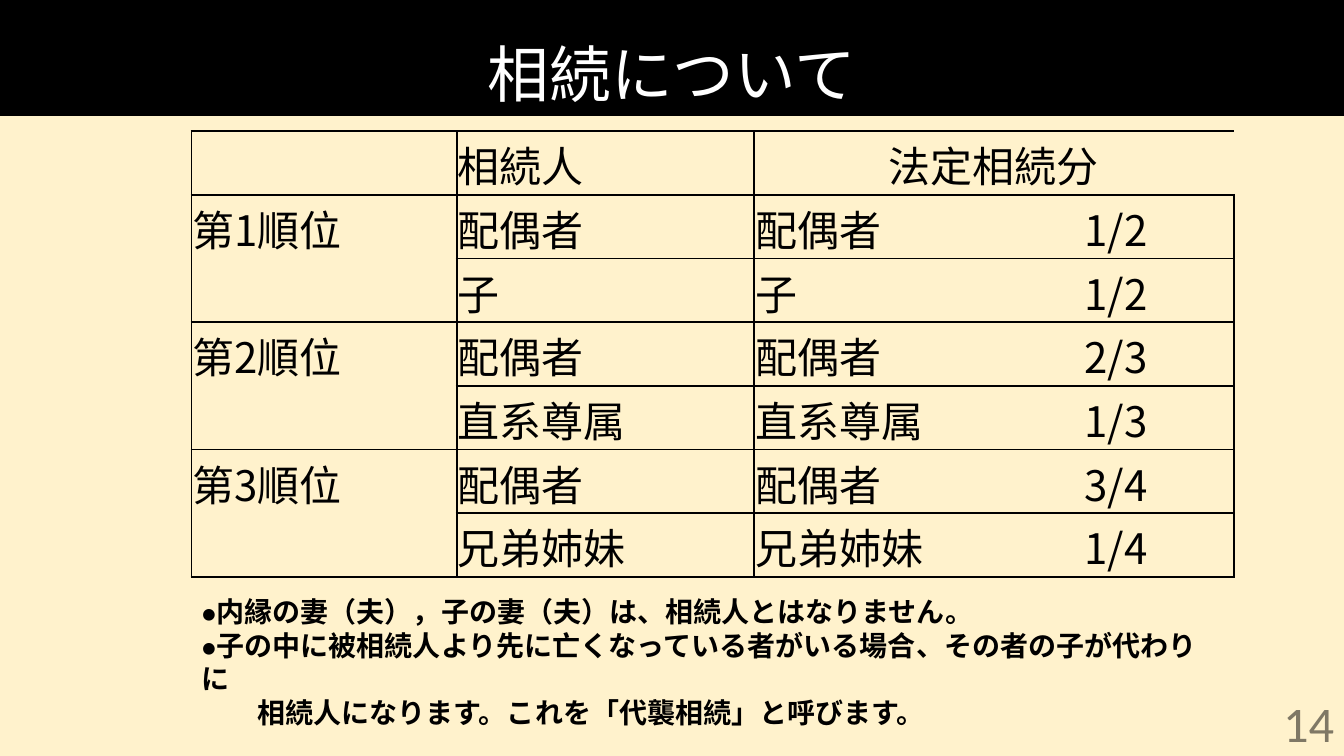
"""Build the slide on the order of heirs and their statutory shares."""
from dataclasses import dataclass
from typing import Any

from lxml.etree import SubElement
from pptx import Presentation
from pptx.dml.color import RGBColor
from pptx.enum.shapes import MSO_SHAPE as Preset
from pptx.enum.text import MSO_ANCHOR as Anchor, PP_ALIGN as Align
from pptx.oxml.ns import qn
from pptx.util import Pt

BLACK, WHITE, CREAM = "000000", "FFFFFF", "FFF2CC"
LATIN, CJK = "Calibri", "Noto Sans CJK JP"
TABLE_LEFT, TABLE_TOP, ROW_HEIGHT = 136.8, 93.6, 45.5
COLUMN_WIDTHS = (189.4, 212.4, 235.4, 107.3)
EDGES = ("L", "R", "T", "B")
CELL_FORMAT = dict(margin_left=Pt(0.75), margin_right=Pt(0.75), margin_top=Pt(0.75),
                   margin_bottom=Pt(0), vertical_anchor=Anchor.BOTTOM)


@dataclass
class Span:
    text: str
    size: float
    bold: bool = False
    color: str = BLACK
    font: str = LATIN


@dataclass
class Heir:
    rank: str
    name: str
    share: str


@dataclass
class Note:
    spans: list[Span]
    indent: float = 0


HEIRS = [
    Heir("第1順位", "配偶者", "1/2"),
    Heir("", "子", "1/2"),
    Heir("第2順位", "配偶者", "2/3"),
    Heir("", "直系尊属", "1/3"),
    Heir("第3順位", "配偶者", "3/4"),
    Heir("", "兄弟姉妹", "1/4"),
]
NOTES = [
    Note([Span("●", 18), Span("内縁の妻（夫），子の妻（夫）は、相続人とはなりません。", 20, True)]),
    Note([Span("●", 18),
          Span("子の中に被相続人より先に亡くなっている者がいる場合、その者の子が代わりに", 20, True)]),
    Note([Span("相続人になります。これを「代襲相続」と呼びます。", 20, True)], indent=40),
]


def rgb(value: str) -> RGBColor:
    """Turn a hex string into a colour."""
    return RGBColor.from_string(value)


def apply(target: Any, values: dict[str, Any]) -> None:
    """Set each named attribute on the target."""
    for name, value in values.items():
        setattr(target, name, value)


def add_span(para: Any, span: Span) -> Any:
    """Append a formatted run to a paragraph and return it."""
    run = para.add_run()
    run.text = span.text
    apply(run.font, dict(name=span.font, size=Pt(span.size), bold=span.bold))
    run.font.color.rgb = rgb(span.color)
    SubElement(run.font._element, qn("a:ea"), typeface=span.font)
    return run


def add_box(page: Any, left: float, top: float, width: float, height: float) -> Any:
    """Add a wrapping text box and return its text frame."""
    box = page.shapes.add_textbox(Pt(left), Pt(top), Pt(width), Pt(height))
    box.text_frame.word_wrap = True
    return box.text_frame


def add_title(page: Any, width: float) -> None:
    """Draw the black title band."""
    band = page.shapes.add_shape(Preset.RECTANGLE, Pt(0), Pt(0), Pt(width), Pt(82.8))
    band.shadow.inherit = False
    band.fill.solid()
    band.fill.fore_color.rgb = rgb(BLACK)
    band.line.fill.background()
    band.text_frame.vertical_anchor = Anchor.BOTTOM
    para = band.text_frame.paragraphs[0]
    apply(para, dict(alignment=Align.CENTER, line_spacing=0.9))
    add_span(para, Span("相続について", 44, color=WHITE))


def set_borders(cell: Any, hidden: str) -> None:
    """Draw black cell edges except the hidden ones."""
    properties = cell._tc.get_or_add_tcPr()
    for edge in EDGES:
        line = SubElement(properties, qn(f"a:ln{edge}"), w=str(Pt(1.5)))
        if edge in hidden:
            SubElement(line, qn("a:noFill"))
        else:
            fill = SubElement(line, qn("a:solidFill"))
            SubElement(fill, qn("a:srgbClr"), val=BLACK)


def hidden_edges(row: int, column: int) -> str:
    """Name the edges that join a cell to its neighbour."""
    if column == 0 and row > 0:
        return "B" if row % 2 else "T"
    return {2: "R", 3: "L"}.get(column, "")


def add_heirs(page: Any) -> None:
    """Add the table of heirs and shares."""
    rows = [("", "相続人", "法定相続分", "")]
    rows += [(heir.rank, heir.name, heir.name, heir.share) for heir in HEIRS]
    frame = page.shapes.add_table(
        len(rows), len(COLUMN_WIDTHS), Pt(TABLE_LEFT), Pt(TABLE_TOP),
        Pt(sum(COLUMN_WIDTHS)), Pt(ROW_HEIGHT * len(rows)))
    table = frame.table
    apply(table, dict(first_row=False, horz_banding=False))
    for column, width in zip(table.columns, COLUMN_WIDTHS):
        column.width = Pt(width)
    for r, texts in enumerate(rows):
        table.rows[r].height = Pt(ROW_HEIGHT)
        for c, text in enumerate(texts):
            cell = table.cell(r, c)
            apply(cell, CELL_FORMAT)
            set_borders(cell, hidden_edges(r, c))
            cell.fill.background()
            if text:
                add_span(cell.text_frame.paragraphs[0], Span(text, 30, font=CJK))
    share_head = table.cell(0, 2)
    share_head.merge(table.cell(0, 3))
    share_head.text_frame.paragraphs[0].alignment = Align.CENTER


def add_notes(page: Any) -> None:
    """Add the remarks below the table."""
    frame = add_box(page, TABLE_LEFT, 421.2, 733.7, 80)
    for index, note in enumerate(NOTES):
        para = frame.add_paragraph() if index else frame.paragraphs[0]
        if note.indent:
            para._p.get_or_add_pPr().set("marL", str(Pt(note.indent)))
        for span in note.spans:
            add_span(para, span)


def add_number(page: Any) -> None:
    """Add the half-transparent page number."""
    frame = add_box(page, 744, 501.8, 216, 28.8)
    frame.vertical_anchor = Anchor.MIDDLE
    para = frame.paragraphs[0]
    para.alignment = Align.RIGHT
    run = add_span(para, Span("14", 36))
    color = run.font._element.find(f".//{qn('a:srgbClr')}")
    SubElement(color, qn("a:alpha"), val="50000")


def main() -> None:
    """Build and save the deck."""
    deck = Presentation()
    apply(deck, dict(slide_width=Pt(960), slide_height=Pt(540)))
    page = deck.slides.add_slide(deck.slide_layouts[6])
    page.background.fill.solid()
    page.background.fill.fore_color.rgb = rgb(CREAM)
    add_title(page, 960)
    add_heirs(page)
    add_notes(page)
    add_number(page)
    deck.save("out.pptx")


if __name__ == "__main__":
    main()
